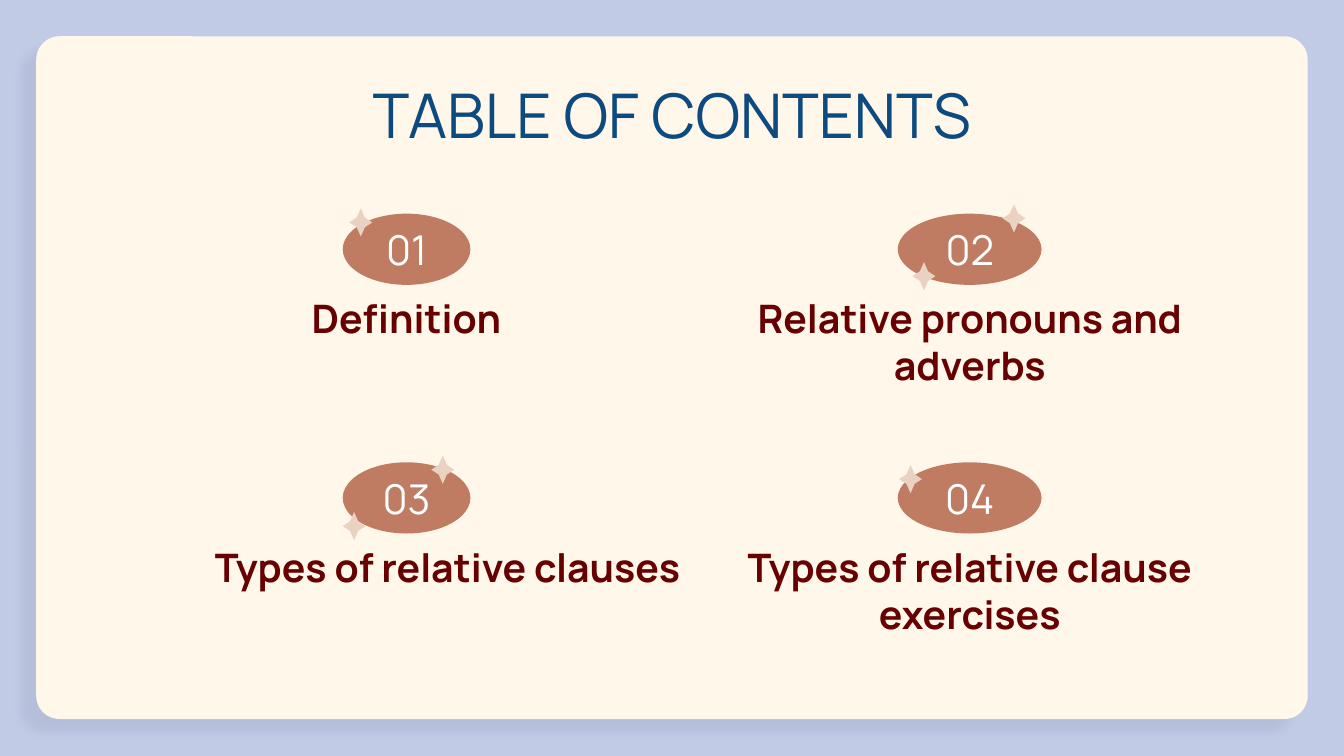
from lxml.etree import SubElement as Sub
from pptx import Presentation as Deck
from pptx.dml.color import RGBColor as RGB
from pptx.enum.shapes import MSO_SHAPE as Kind
from pptx.enum.text import MSO_ANCHOR as Anchor, PP_ALIGN as Align
from pptx.oxml.ns import qn
from pptx.util import Inches, Pt

SKY = RGB(0xC2, 0xCB, 0xE6)
CREAM = RGB(0xFF, 0xF7, 0xEA)
CLAY = RGB(0xBF, 0x7C, 0x63)
BLUSH = RGB(0xEA, 0xD2, 0xC3)
NAVY = RGB(0x0D, 0x4A, 0x80)
WINE = RGB(0x67, 0x00, 0x01)
WHITE = RGB(0xFF, 0xFF, 0xFF)
SHADE = RGB(0x51, 0x5B, 0x7A)

WIDE = 10
HIGH = WIDE * 9 / 16
COLS = 10
SPAN = 3.59
LEFTS = (1.23, 5.42)
TOPS = (1.59, 3.44)
OVALS = (0.95, 1.07)
NUMS = (0.58, 0.65)
STAR = ((0.5, 0), (0.32, 0.33), (0, 0.5), (0.32, 0.67),
        (0.5, 1), (0.68, 0.67), (1, 0.5), (0.68, 0.33))
ITEMS = (
    ("Definition", SPAN, [(0.05, -0.04)]),
    ("Relative pronouns and adverbs", SPAN, [(0.78, -0.07), (0.11, 0.36)]),
    ("Types of relative clauses", 4.2, [(0.66, -0.05), (0, 0.37)]),
    ("Types of relative clause exercises", SPAN, [(0.01, 0.02)]),
)


class Page:
    font = "Manrope"

    def __init__(self, deck):
        self.slide = deck.slides.add_slide(deck.slide_layouts[6])
        self.shapes = self.slide.shapes
        self.unit = deck.slide_width / COLS
        fill = self.slide.background.fill
        fill.solid()
        fill.fore_color.rgb = SKY

    def grid(self, *cells):
        return [round(cell * self.unit) for cell in cells]

    def paint(self, shape, color):
        shape.shadow.inherit = False
        shape.fill.solid()
        shape.fill.fore_color.rgb = color
        shape.line.fill.background()
        return shape

    def card(self, *box):
        shape = self.shapes.add_shape(Kind.ROUNDED_RECTANGLE, *self.grid(*box))
        shape.adjustments[0] = 0.034
        self.paint(shape, CREAM)
        glow = shape._element.spPr.find(qn("a:effectLst"))
        cast = Sub(glow, qn("a:outerShdw"), blurRad=str(Pt(4.5)), dist=str(Pt(10.5)),
                   dir=str(137 * 60000), algn="bl", rotWithShape="0")
        tint = Sub(cast, qn("a:srgbClr"), val=str(SHADE))
        Sub(tint, qn("a:alpha"), val="10000")

    def oval(self, *box):
        self.paint(self.shapes.add_shape(Kind.OVAL, *self.grid(*box)), CLAY)

    def star(self, left, top, wide=0.17, high=0.21):
        dots = [self.grid(left + x * wide, top + y * high) for x, y in STAR]
        pen = self.shapes.build_freeform(*dots[0])
        pen.add_line_segments(dots[1:], close=True)
        self.paint(pen.convert_to_shape(), BLUSH)

    def text(self, words, box, size, color, anchor=Anchor.TOP, bold=False, after=0):
        frame = self.shapes.add_textbox(*self.grid(*box)).text_frame
        style = dict(word_wrap=True, vertical_anchor=anchor, margin_left=0,
                     margin_right=0, margin_top=0, margin_bottom=0)
        for key, value in style.items():
            setattr(frame, key, value)
        para = frame.paragraphs[0]
        para.alignment = Align.CENTER
        para.space_after = Pt(after)
        run = para.add_run()
        run.text = words
        for key, value in dict(name=self.font, size=Pt(size), bold=bold).items():
            setattr(run.font, key, value)
        run.font.color.rgb = color


def main():
    deck = Deck()
    deck.slide_width, deck.slide_height = Inches(WIDE), Inches(HIGH)
    page = Page(deck)
    page.card(0.27, 0.27, 9.46, 5.08)
    page.text("TABLE OF CONTENTS", (0.78, 0.49, 8.44, 0.63), 33, NAVY, Anchor.BOTTOM)
    for spot, (label, span, stars) in enumerate(ITEMS):
        row, col = divmod(spot, 2)
        left, top = LEFTS[col], TOPS[row]
        mid = left + SPAN / 2
        edge = mid - OVALS[col] / 2
        page.oval(edge, top, OVALS[col], 0.53)
        page.text(f"{spot + 1:02}", (mid - NUMS[col] / 2, top + 0.11, NUMS[col], 0.31),
                  22, WHITE, Anchor.MIDDLE)
        page.text(label, (left, top + 0.6, span, 0.37), 21, WINE, bold=True, after=12)
        for x, y in stars:
            page.star(edge + x, top + y)
    deck.save("out.pptx")


if __name__ == "__main__":
    main()
